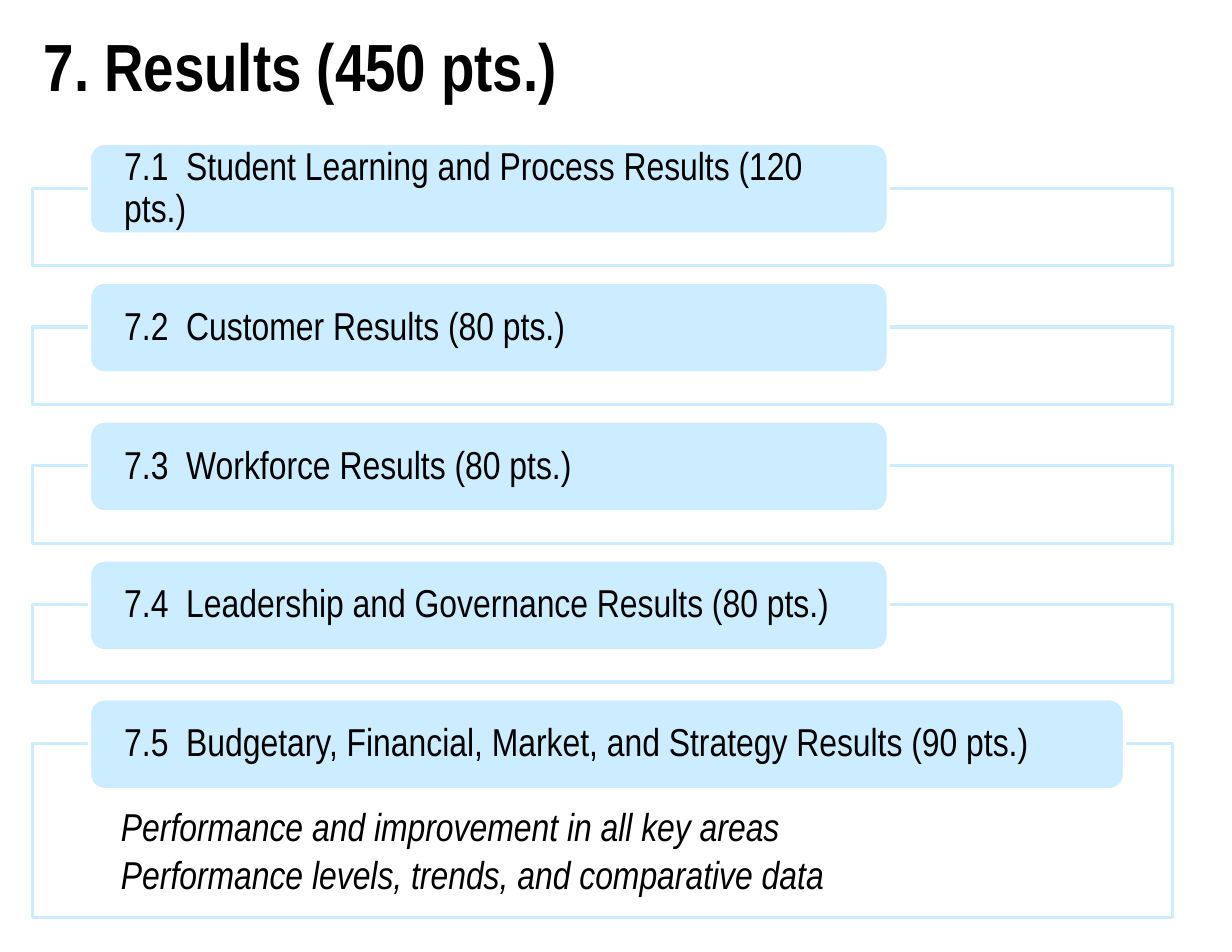
from dataclasses import dataclass

from pptx import Presentation
from pptx import util as u
from pptx.dml.color import RGBColor
from pptx.enum import shapes, text

COLORS = {"accent": "CCECFF", "paper": "FFFFFF", "ink": "000000"}
FONT = "Arial Narrow"

FRAME_LEFT, FRAME_WIDTH = 0.29, 10.18
LABEL_LEFT, LABEL_HEIGHT = 0.8, 0.81
FIRST_TOP, PITCH = 1.28, 1.24
FRAME_DROP = 0.4  # distance from label top to frame top


@dataclass
class ResultItem:
    label: str
    label_width: float = 7.13
    frame_height: float = 0.69
    details: tuple[str, ...] = ()


ITEMS = [
    ResultItem("7.1  Student Learning and Process Results (120 pts.)"),
    ResultItem("7.2  Customer Results (80 pts.)"),
    ResultItem("7.3  Workforce Results (80 pts.)"),
    ResultItem("7.4  Leadership and Governance Results (80 pts.)"),
    ResultItem(
        "7.5  Budgetary, Financial, Market, and Strategy Results (90 pts.)",
        label_width=9.24,
        frame_height=1.55,
        details=(
            "Performance and improvement in all key areas",
            "Performance levels, trends, and comparative data",
        ),
    ),
]


def color(name: str) -> RGBColor:
    return RGBColor.from_string(COLORS[name])


def write_text(shape, *lines: str, size: float = 25, bold: bool = False,
               italic: bool = False, spacing: float = 0.9, after: float = 0,
               anchor=text.MSO_ANCHOR.TOP, margins=(0.1, 0.05, 0.1, 0.05)) -> None:
    frame = shape.text_frame
    frame.word_wrap = True
    frame.auto_size = text.MSO_AUTO_SIZE.NONE
    frame.vertical_anchor = anchor
    (frame.margin_left, frame.margin_top,
     frame.margin_right, frame.margin_bottom) = map(u.Inches, margins)
    for index, line in enumerate(lines):
        paragraph = frame.paragraphs[0] if index == 0 else frame.add_paragraph()
        paragraph.alignment = text.PP_ALIGN.LEFT
        paragraph.line_spacing = spacing
        paragraph.space_after = u.Pt(after)
        run = paragraph.add_run()
        run.text = line
        run.font.name = FONT
        run.font.size = u.Pt(size)
        run.font.bold = bold
        run.font.italic = italic
        run.font.color.rgb = color("ink")


def add_box(slide, kind, left: float, top: float, width: float, height: float,
            fill: str, line: str):
    shape = slide.shapes.add_shape(
        kind, *map(u.Inches, (left, top, width, height)))
    shape.shadow.inherit = False
    shape.fill.solid()
    shape.fill.fore_color.rgb = color(fill)
    shape.line.color.rgb = color(line)
    shape.line.width = u.Pt(2)
    return shape


def add_item(slide, item: ResultItem, top: float) -> None:
    frame = add_box(slide, shapes.MSO_SHAPE.RECTANGLE, FRAME_LEFT,
                    top + FRAME_DROP, FRAME_WIDTH, item.frame_height,
                    fill="paper", line="accent")
    if item.details:
        write_text(frame, *item.details, italic=True, after=4,
                   margins=(0.79, 0.57, 0.79, 0.19))
    label = add_box(slide, shapes.MSO_SHAPE.ROUNDED_RECTANGLE, LABEL_LEFT, top,
                    item.label_width, LABEL_HEIGHT, fill="accent", line="paper")
    write_text(label, item.label, anchor=text.MSO_ANCHOR.MIDDLE,
               margins=(0.27, 0, 0.27, 0))


def main() -> None:
    presentation = Presentation()
    presentation.slide_width = u.Inches(11)
    presentation.slide_height = u.Inches(8.5)
    slide = presentation.slides.add_slide(presentation.slide_layouts[5])

    # Title
    title = slide.shapes.title
    title.left, title.top = u.Inches(FRAME_LEFT), u.Inches(0.17)
    title.width, title.height = u.Inches(8), u.Inches(0.82)
    write_text(title, "7. Results (450 pts.)", size=42.9, bold=True, spacing=1.0)

    # Labelled frames, evenly spaced
    for index, item in enumerate(ITEMS):
        add_item(slide, item, FIRST_TOP + index * PITCH)

    presentation.save("out.pptx")


if __name__ == "__main__":
    main()
